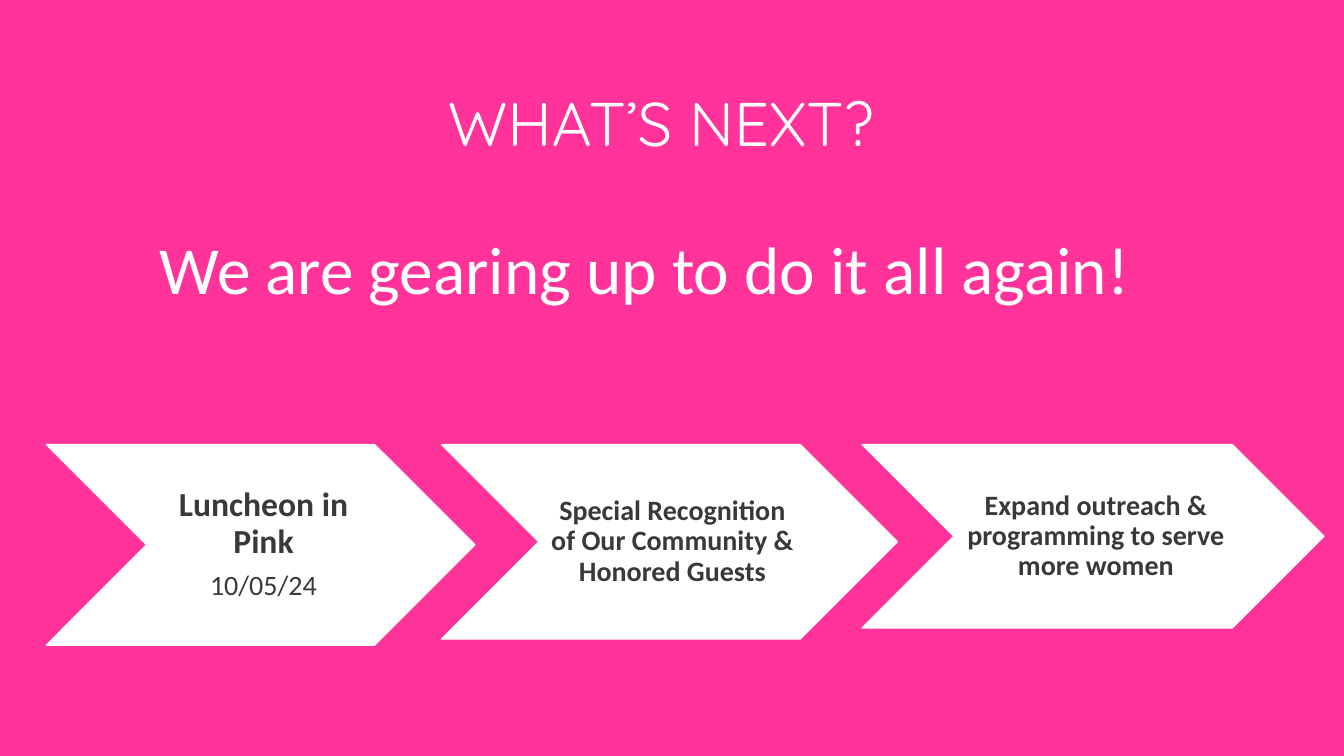
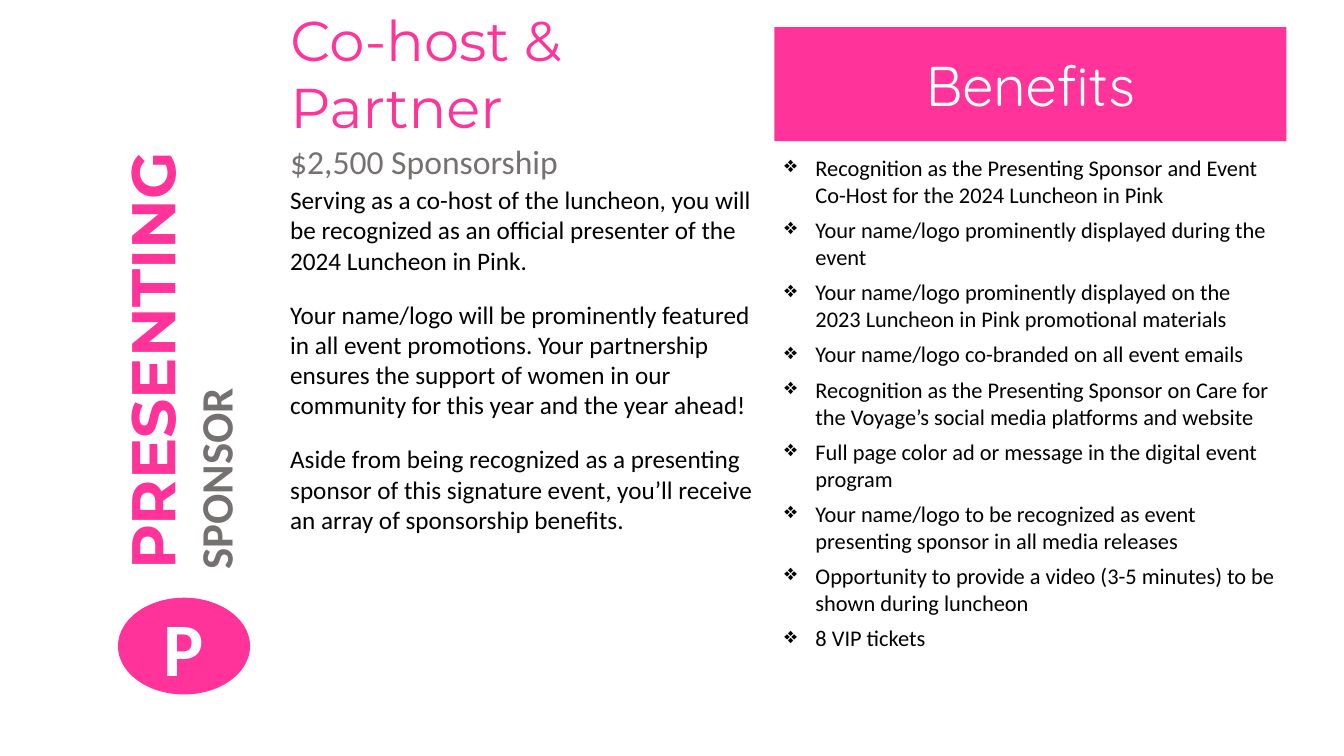
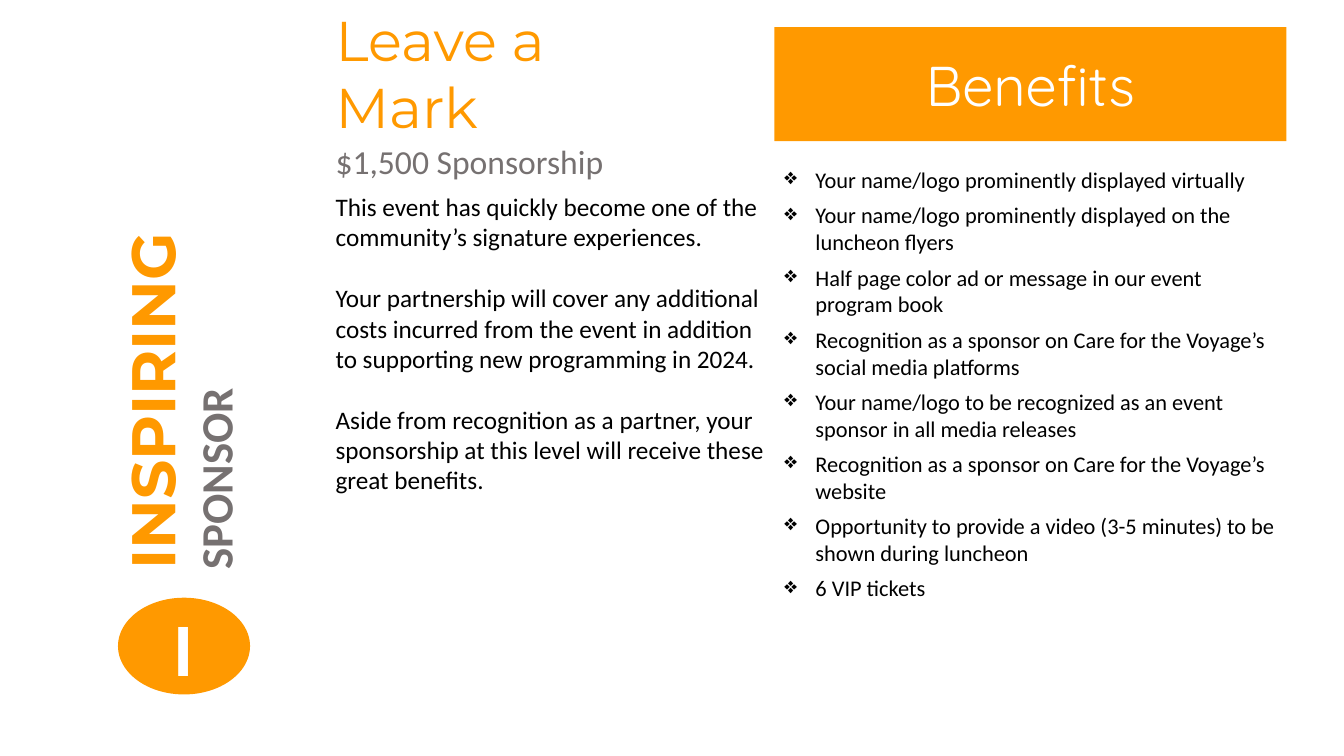
from lxml import etree
from pptx import Presentation
from pptx.dml.color import RGBColor
from pptx.enum.shapes import MSO_SHAPE
from pptx.enum.text import MSO_ANCHOR, MSO_AUTO_SIZE, PP_ALIGN
from pptx.oxml.ns import qn
from pptx.util import Inches, Pt

CHEVRON, OVAL, RECTANGLE = MSO_SHAPE.CHEVRON, MSO_SHAPE.OVAL, MSO_SHAPE.RECTANGLE
LEFT, CENTER = PP_ALIGN.LEFT, PP_ALIGN.CENTER
TOP, MIDDLE = MSO_ANCHOR.TOP, MSO_ANCHOR.MIDDLE
NO_FIT = MSO_AUTO_SIZE.NONE

PINK, ORANGE, WHITE, BLACK = "FF3399", "FF9900", "FFFFFF", "000000"
GRAY, CHARCOAL = "767171", "3B3838"
BODY, HEADING, DISPLAY = "Calibri", "Montserrat", "Quicksand"
TITLE_ONLY = 5


def rgb(value):
    return RGBColor.from_string(value)


class Deck:
    """Holds the presentation, its accent colour and the current slide."""

    def __init__(self):
        self.prs = Presentation()
        self.prs.slide_width, self.prs.slide_height = Inches(13.33), Inches(7.5)

    def new_slide(self, accent, background=WHITE):
        self.accent = accent
        self.slide = self.prs.slides.add_slide(self.prs.slide_layouts[TITLE_ONLY])
        fill = self.slide.background.fill
        fill.solid()
        fill.fore_color.rgb = rgb(background)

    def set_lines(self, frame, lines, size, color, font=BODY, bold=False,
                  align=LEFT, gap=0, bullet=None):
        """Fill an empty frame; gap is the space between paragraphs in points."""
        frame.word_wrap = True
        for index, line in enumerate(lines):
            paragraph = frame.paragraphs[0] if index == 0 else frame.add_paragraph()
            paragraph.text = line
            paragraph.alignment = align
            if index < len(lines) - 1:
                paragraph.space_after = Pt(gap)
            if bullet:
                properties = paragraph._p.get_or_add_pPr()
                properties.set("marL", str(Inches(0.31)))
                properties.set("indent", str(-Inches(0.31)))
                etree.SubElement(properties, qn("a:buChar")).set("char", bullet)
            self.style(paragraph, size, color, font, bold)

    def style(self, paragraph, size, color, font=BODY, bold=False):
        paragraph.font.size = Pt(size)
        paragraph.font.name = font
        paragraph.font.bold = bold
        paragraph.font.color.rgb = rgb(color)

    def title(self, left, top, width, height, lines, size, color, font, align=LEFT):
        holder = self.slide.shapes.title
        holder.left, holder.top = Inches(left), Inches(top)
        holder.width, holder.height = Inches(width), Inches(height)
        frame = holder.text_frame
        frame.auto_size, frame.vertical_anchor = NO_FIT, TOP
        self.set_lines(frame, lines, size, color, font, align=align)

    def text(self, left, top, width, height, lines, size, color, **options):
        box = self.slide.shapes.add_textbox(
            Inches(left), Inches(top), Inches(width), Inches(height))
        self.set_lines(box.text_frame, lines, size, color, **options)
        return box.text_frame

    def shape(self, kind, left, top, width, height, fill):
        shape = self.slide.shapes.add_shape(
            kind, Inches(left), Inches(top), Inches(width), Inches(height))
        shape.shadow.inherit = False
        shape.fill.solid()
        shape.fill.fore_color.rgb = rgb(fill)
        shape.line.fill.background()
        shape.text_frame.vertical_anchor = MIDDLE
        return shape

    def step(self, left, width, height, heading, size, date=None):
        chevron = self.shape(CHEVRON, left, 4.41, width, height, WHITE)
        chevron.line.color.rgb = rgb(WHITE)
        chevron.line.width = Pt(1)
        frame = chevron.text_frame
        frame.margin_left = Inches(0.1)
        frame.margin_right = frame.margin_top = frame.margin_bottom = Inches(0.04)
        lines = [heading, date] if date else [heading]
        self.set_lines(frame, lines, size, CHARCOAL, bold=True, align=CENTER)
        if date:
            self.style(frame.paragraphs[1], 20, CHARCOAL)
        for paragraph in frame.paragraphs:
            paragraph.line_spacing = 0.9
            paragraph.space_after = Pt(8)

    def level_name(self, level):
        """Sponsor level, read upwards, above a badge with its initial."""
        frame = self.text(1.08, 0.7, 1.48, 5.05, [level, "SPONSOR"], 44,
                          self.accent, font=HEADING, bold=True)
        self.style(frame.paragraphs[1], 32, GRAY, bold=True)
        frame._txBody.bodyPr.set("vert", "vert270")
        badge = self.shape(OVAL, 1.17, 5.93, 1.31, 0.96, self.accent)
        self.set_lines(badge.text_frame, [level[0]], 54, WHITE, bold=True, align=CENTER)

    def benefits(self, top, items):
        left, width = 7.68, 5.08
        band = self.shape(RECTANGLE, left, 0.27, width, 1.13, self.accent)
        self.set_lines(band.text_frame, ["Benefits"], 40, WHITE, DISPLAY, align=CENTER)
        self.text(left, top, width, 6.83 - top, items, 16, BLACK, gap=6, bullet="❖")

    def sponsor_slide(self, accent, level, left, heading, price,
                      pitch_top, pitch, pitch_gap, benefits_top, benefits):
        width = 7.68 - left
        self.new_slide(accent)
        self.level_name(level)
        self.title(left, 0, width, 1.4, heading, 40, accent, HEADING)
        self.text(left, 1.35, width, 0.5, [price], 24, GRAY)
        self.text(left, pitch_top, width, 3.6, pitch, 18, BLACK, gap=pitch_gap)
        self.benefits(benefits_top, benefits)


def main():
    deck = Deck()

    deck.new_slide(PINK, background=PINK)
    deck.title(0.23, 0.79, 12.65, 0.9, ["WHAT’S NEXT?"], 44, WHITE, DISPLAY, CENTER)
    deck.text(0.07, 2.21, 12.65, 0.95, ["We are gearing up to do it all again!"],
              48, WHITE, align=CENTER)
    deck.step(0.46, 4.25, 1.99, "Luncheon in Pink", 24, "10/05/24")
    deck.step(4.38, 4.52, 1.93,
              "Special Recognition of Our Community & Honored Guests", 20)
    deck.step(8.55, 4.58, 1.82,
              "Expand outreach & programming to serve more women", 20)

    deck.sponsor_slide(
        PINK, "PRESENTING", 2.78, ["Co-host & Partner"], "$2,500 Sponsorship",
        1.78, [
            "Serving as a co-host of the luncheon, you will be recognized as an "
            "official presenter of the 2024 Luncheon in Pink.",
            "Your name/logo will be prominently featured in all event promotions. "
            "Your partnership ensures the support of women in our community for "
            "this year and the year ahead!",
            "Aside from being recognized as a presenting sponsor of this signature "
            "event, you’ll receive an array of sponsorship benefits.",
        ], 17,
        1.48, [
            "Recognition as the Presenting Sponsor and Event Co-Host for the 2024 "
            "Luncheon in Pink",
            "Your name/logo prominently displayed during the event",
            "Your name/logo prominently displayed on the 2023 Luncheon in Pink "
            "promotional materials",
            "Your name/logo co-branded on all event emails",
            "Recognition as the Presenting Sponsor on Care for the Voyage’s social "
            "media platforms and website",
            "Full page color ad or message in the digital event program",
            "Your name/logo to be recognized as event presenting sponsor in all "
            "media releases",
            "Opportunity to provide a video (3-5 minutes) to be shown during luncheon",
            "8 VIP tickets",
        ])

    deck.sponsor_slide(
        ORANGE, "INSPIRING", 3.23, ["Leave a", "Mark"], "$1,500 Sponsorship",
        1.85, [
            "This event has quickly become one of the community’s signature "
            "experiences.",
            "Your partnership will cover any additional costs incurred from the "
            "event in addition to supporting new programming in 2024.",
            "Aside from recognition as a partner, your sponsorship at this level "
            "will receive these great benefits.",
        ], 22,
        1.6, [
            "Your name/logo prominently displayed virtually",
            "Your name/logo prominently displayed on the luncheon flyers",
            "Half page color ad or message in our event program book",
            "Recognition as a sponsor on Care for the Voyage’s social media platforms",
            "Your name/logo to be recognized as an event sponsor in all media releases",
            "Recognition as a sponsor on Care for the Voyage’s website",
            "Opportunity to provide a video (3-5 minutes) to be shown during luncheon",
            "6 VIP tickets",
        ])

    deck.prs.save("out.pptx")


if __name__ == "__main__":
    main()
